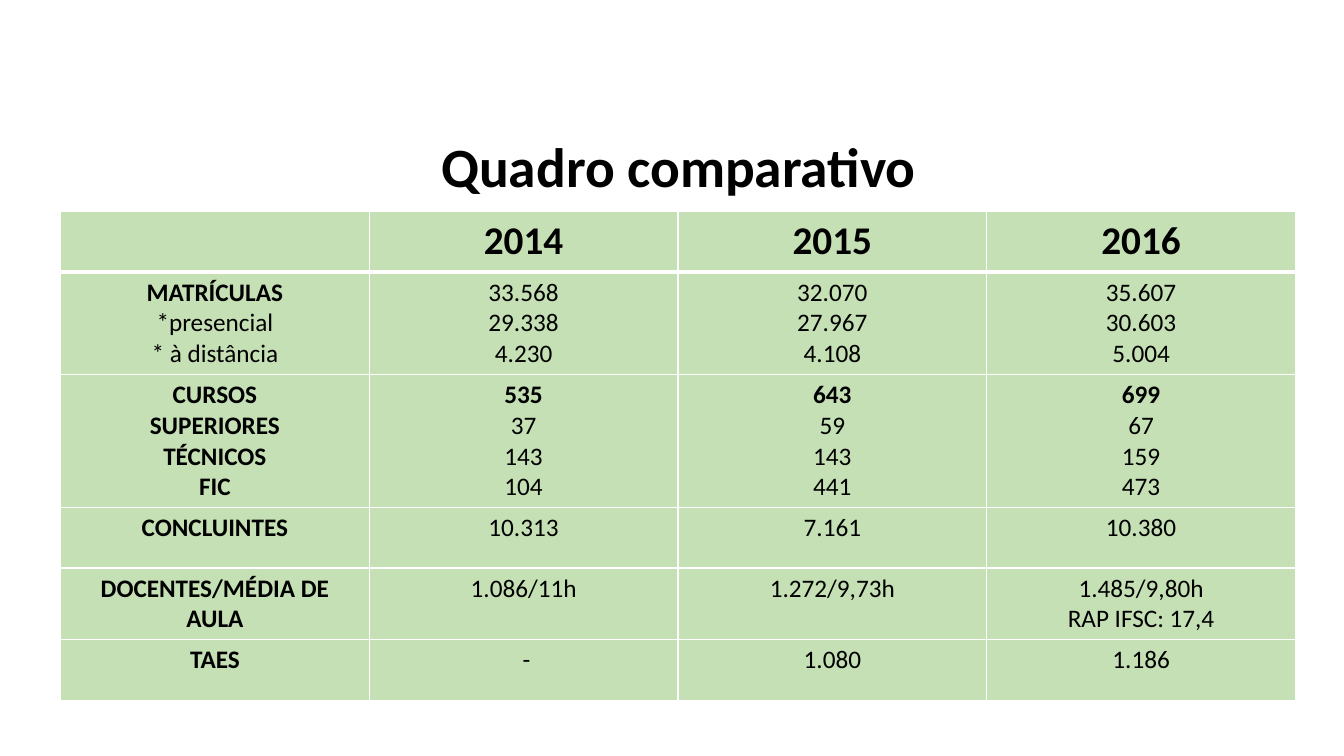
"""Build the "Quadro comparativo" slide with its yearly comparison table."""
from dataclasses import dataclass

from lxml import etree
from pptx import Presentation
from pptx import util as u
from pptx.dml import color
from pptx.enum import text
from pptx.oxml import ns


@dataclass(frozen=True)
class Theme:
    font: str = "Calibri"
    ink: str = "000000"
    cell: str = "C5E0B4"
    border: str = "FFFFFF"
    title: float = 39.6
    header: float = 28
    body: float = 18


@dataclass(frozen=True)
class Row:
    label: str
    values: tuple[str, ...]
    bold_labels: int = 1
    bold_values: int = 0
    size: float = 18


T = Theme()
ROWS = (
    Row("", ("2014", "2015", "2016"), bold_values=1, size=T.header),
    Row("MATRÍCULAS\v*presencial\v* à distância",
        ("33.568\v29.338\v4.230", "32.070\v27.967\v4.108", "35.607\v30.603\v5.004"), size=T.body),
    Row("CURSOS\vSUPERIORES\vTÉCNICOS\vFIC",
        ("535\v37\v143\v104", "643\v59\v143\v441", "699\v67\v159\v473"),
        bold_labels=4, bold_values=1, size=T.body),
    Row("CONCLUINTES", ("10.313", "7.161", "10.380"), size=T.body),
    Row("DOCENTES/MÉDIA DE AULA",
        ("1.086/11h", "1.272/9,73h", "1.485/9,80h\nRAP IFSC: 17,4"), size=T.body),
    Row("TAES", (" -", "1.080", "1.186"), size=T.body),
)


def write(tf, content: str, size: float, bold_lines: int) -> None:
    tf.text = content
    for p in tf.paragraphs:
        p.alignment = text.PP_ALIGN.CENTER
        p.font.size = u.Pt(size)
        for i, r in enumerate(p.runs):
            r.font.name = T.font
            r.font.size = u.Pt(size)
            r.font.bold = i < bold_lines
            r.font.color.rgb = color.RGBColor.from_string(T.ink)


def set_borders(cell, bottom: float) -> None:
    tc_pr = cell._tc.get_or_add_tcPr()
    widths = {"a:lnL": 1, "a:lnR": 1, "a:lnT": 1, "a:lnB": bottom}
    for i, (tag, width) in enumerate(widths.items()):
        ln = etree.Element(ns.qn(tag), w=str(u.Pt(width)))
        fill = etree.SubElement(ln, ns.qn("a:solidFill"))
        etree.SubElement(fill, ns.qn("a:srgbClr"), val=T.border)
        tc_pr.insert(i, ln)


def add_title(s) -> None:
    sp = s.shapes.title
    sp.left, sp.top, sp.width, sp.height = map(u.Inches, (0.98, 1.39, 11.5, 0.58))
    tf = sp.text_frame
    tf.auto_size = text.MSO_AUTO_SIZE.NONE
    tf.vertical_anchor = text.MSO_ANCHOR.MIDDLE
    write(tf, "Quadro comparativo", T.title, 1)
    tf.paragraphs[0].line_spacing = 0.9


def add_comparison(s) -> None:
    frame = s.shapes.add_table(len(ROWS), 4, u.Inches(0.6), u.Inches(2.1),
                               u.Inches(12.25), u.Inches(0.6 * len(ROWS)))
    frame.table.horz_banding = False
    for i, row in enumerate(ROWS):
        for j, content in enumerate((row.label, *row.values)):
            cell = frame.table.cell(i, j)
            cell.fill.solid()
            cell.fill.fore_color.rgb = color.RGBColor.from_string(T.cell)
            set_borders(cell, bottom=1 if i else 3)
            write(cell.text_frame, content, row.size, row.bold_values if j else row.bold_labels)
    frame.height = u.Inches(4.8)


def main() -> None:
    prs = Presentation()
    prs.slide_width, prs.slide_height = u.Inches(13.33), u.Inches(7.5)
    s = prs.slides.add_slide(prs.slide_layouts[5])
    add_title(s)
    add_comparison(s)
    prs.save("out.pptx")


if __name__ == "__main__":
    main()
